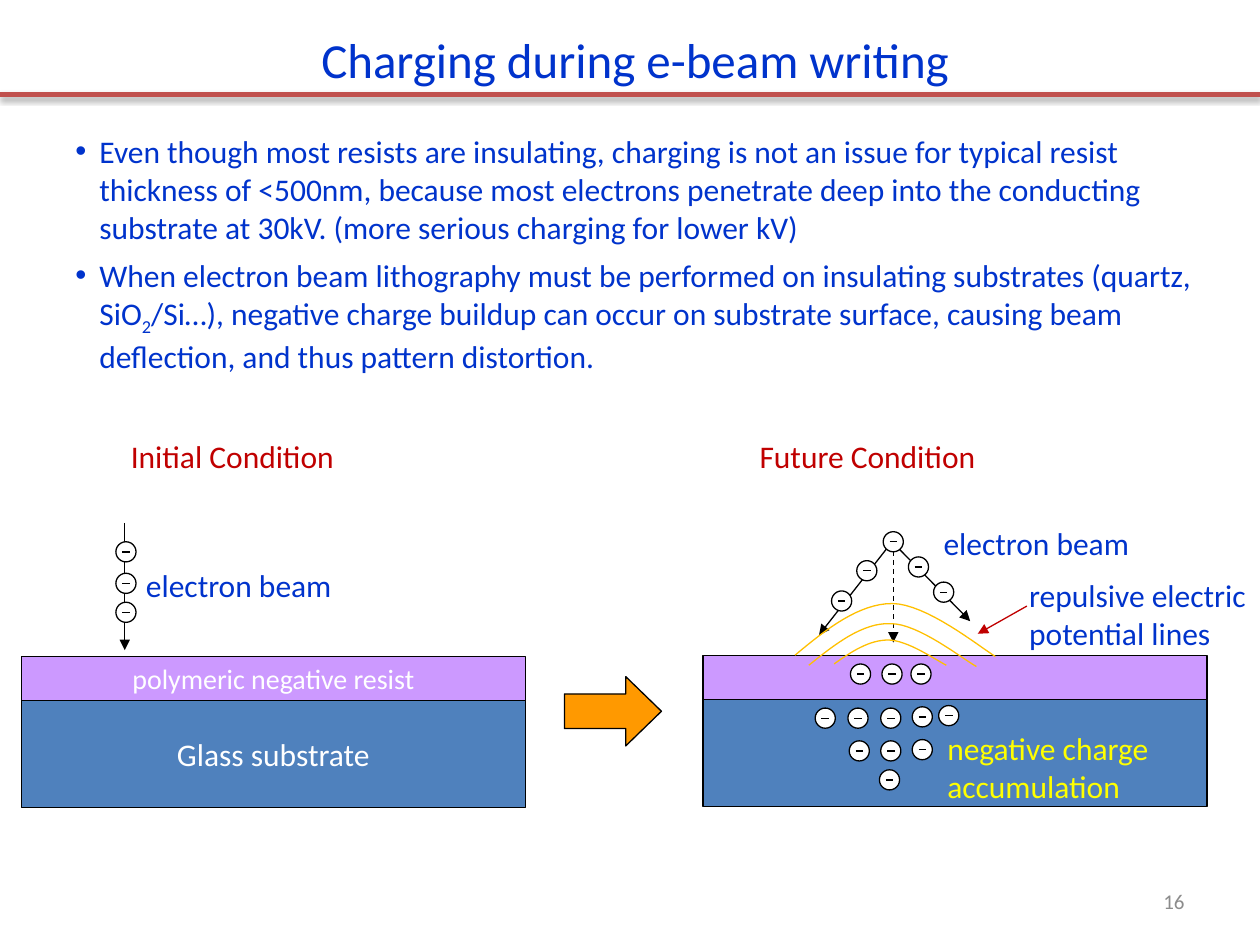
from lxml.etree import SubElement
from pptx import Presentation
from pptx.dml.color import RGBColor
from pptx.enum.dml import MSO_LINE
from pptx.enum.shapes import MSO_CONNECTOR, MSO_SHAPE
from pptx.enum.text import MSO_ANCHOR, PP_ALIGN
from pptx.oxml.ns import qn
from pptx.util import Inches, Pt

COLORS = {
    "blue": "0033CC", "red": "C00000", "rule": "C0504D", "black": "000000",
    "white": "FFFFFF", "glass": "4F81BD", "resist": "CC99FF", "yellow": "FFFF00",
    "gold": "FFC000", "orange": "FF9900", "gray": "8C8C8C",
}
BULLETS = [
    ["Even though most resists are insulating, charging is not an issue for typical resist "
     "thickness of <500nm, because most electrons penetrate deep into the conducting "
     "substrate at 30kV. (more serious charging for lower kV)"],
    ["When electron beam lithography must be performed on insulating substrates (quartz, SiO",
     "2",
     "/Si…), negative charge buildup can occur on substrate surface, causing beam deflection, "
     "and thus pattern distortion."],
]
LABELS = [
    ("electron beam", (1.06, 4.44, 1.69, 0.4), "blue"),
    ("electron beam", (7.39, 4.11, 1.7, 0.4), "blue"),
    ("negative charge\naccumulation", (7.42, 5.74, 1.9, 0.71), "yellow"),
    ("Initial Condition", (0.94, 3.42, 2.2, 0.48), "red"),
    ("Future Condition", (5.93, 3.42, 2.33, 0.48), "red"),
    ("repulsive electric potential lines", (8.07, 4.52, 1.93, 0.71), "blue"),
]
BEAM_ELECTRONS = [
    (1, 4.86), (1, 4.63), (1, 4.38),
    (6.68, 4.77), (6.88, 4.53), (7.09, 4.3), (7.29, 4.5), (7.49, 4.7),
]
TRAPPED_ELECTRONS = [
    (6.83, 5.35), (7.08, 5.35), (7.31, 5.35),
    (6.55, 5.7), (6.81, 5.7), (7.07, 5.7), (7.32, 5.69), (7.53, 5.68),
    (6.82, 5.96), (7.07, 5.96), (7.32, 5.95), (7.06, 6.19),
]
POTENTIAL_LINES = [
    [(6.42, 5.28), (6.63, 5.11), (6.85, 4.94), (7.07, 4.95), (7.29, 4.95), (7.64, 5.23), (7.75, 5.29)],
    [(6.31, 5.2), (6.56, 4.99), (6.82, 4.79), (7.08, 4.79), (7.35, 4.79), (7.77, 5.13), (7.9, 5.21)],
    [(6.62, 5.27), (6.76, 5.17), (6.9, 5.08), (7.05, 5.08), (7.2, 5.08), (7.43, 5.24), (7.51, 5.28)],
]


def rgb(name):
    """Return the named colour."""
    return RGBColor.from_string(COLORS[name])


def style_text(text_frame, size, color, align=PP_ALIGN.LEFT):
    """Format every run of a text frame alike."""
    for paragraph in text_frame.paragraphs:
        paragraph.alignment = align
        for run in paragraph.runs:
            run.font.name = "Calibri"
            run.font.size = Pt(size)
            run.font.color.rgb = rgb(color)


def place(shape, box):
    """Move and size a shape to a box in inches."""
    shape.left, shape.top, shape.width, shape.height = map(Inches, box)


def add_title(slide, text):
    """Fill the title placeholder."""
    title = slide.shapes.title
    place(title, (2.33, 0.18, 5.42, 0.57))
    title.text_frame.text = text
    title.text_frame.vertical_anchor = MSO_ANCHOR.MIDDLE
    style_text(title.text_frame, 28, "blue", PP_ALIGN.CENTER)


def add_label(slide, text, box, color, size=18, align=PP_ALIGN.LEFT):
    """Add a wrapped text box."""
    label = slide.shapes.add_textbox(*map(Inches, box))
    label.text_frame.word_wrap = True
    label.text_frame.text = text
    style_text(label.text_frame, size, color, align)
    return label


def add_bullets(slide, bullets, box):
    """Add bulleted paragraphs whose second runs are subscripts."""
    text_frame = add_label(slide, "\n".join("" for _ in bullets), box, "blue").text_frame
    for paragraph, parts in zip(text_frame.paragraphs, bullets):
        paragraph.space_after = Pt(6)
        properties = paragraph._p.get_or_add_pPr()
        properties.set("marL", str(Inches(0.19)))
        properties.set("indent", str(-Inches(0.19)))
        SubElement(properties, qn("a:buFont"), typeface="Arial")
        SubElement(properties, qn("a:buChar"), char="•")
        for index, part in enumerate(parts):
            run = paragraph.add_run()
            run.text = part
            if index == 1:
                run._r.get_or_add_rPr().set("baseline", "-25000")
    style_text(text_frame, 18, "blue")


def add_filled(shapes, kind, box, fill):
    """Add a filled shape with a thin black outline."""
    shape = shapes.add_shape(kind, *map(Inches, box))
    shape.shadow.inherit = False
    shape.fill.solid()
    shape.fill.fore_color.rgb = rgb(fill)
    shape.line.color.rgb = rgb("black")
    shape.line.width = Pt(0.75)
    return shape


def add_line(shapes, start, end, color="black", width=0.75, arrow=False, dash=None):
    """Add a straight line and return its empty effect list."""
    line = shapes.add_connector(MSO_CONNECTOR.STRAIGHT, *map(Inches, start + end))
    line.line.color.rgb = rgb(color)
    line.line.width = Pt(width)
    if dash:
        line.line.dash_style = dash
    if arrow:
        SubElement(line.line._get_or_add_ln(), qn("a:tailEnd"), type="triangle")
    return SubElement(line._element.spPr, qn("a:effectLst"))


def add_title_rule(slide):
    """Add the thick line below the title with its soft shadow."""
    effects = add_line(slide.shapes, (0, 0.75), (10, 0.75), "rule", 3)
    shadow = SubElement(effects, qn("a:outerShdw"), blurRad=str(Pt(3.1)), dist=str(Pt(1.6)),
                        dir="5400000", rotWithShape="0")
    color = SubElement(shadow, qn("a:srgbClr"), val=COLORS["black"])
    SubElement(color, qn("a:alpha"), val="38000")


def add_electron(slide, x, y):
    """Add a circled minus sign centred on a point."""
    shapes = slide.shapes.add_group_shape().shapes
    add_filled(shapes, MSO_SHAPE.OVAL, (x - 0.08, y - 0.08, 0.16, 0.16), "white")
    add_line(shapes, (x - 0.03, y), (x + 0.03, y))


def add_sample(slide, left, top, substrate="", resist=""):
    """Add a resist layer on top of a substrate."""
    layers = [(substrate, top + 0.35, 0.85, "glass", 18), (resist, top, 0.35, "resist", 16)]
    for text, layer_top, height, fill, size in layers:
        layer = add_filled(slide.shapes, MSO_SHAPE.RECTANGLE, (left, layer_top, 4, height), fill)
        if text:
            layer.text_frame.text = text
            layer.text_frame.word_wrap = False
            layer.text_frame.vertical_anchor = MSO_ANCHOR.MIDDLE
            style_text(layer.text_frame, size, "white", PP_ALIGN.CENTER)


def bezier(controls, t):
    """Return the point at t on a cubic Bezier curve."""
    weights = ((1 - t) ** 3, 3 * t * (1 - t) ** 2, 3 * t ** 2 * (1 - t), t ** 3)
    return tuple(Inches(sum(w * point[axis] for w, point in zip(weights, controls))) for axis in (0, 1))


def add_curve(slide, controls, steps=16):
    """Add an open curve through joined cubic segments."""
    points = [bezier(controls[first:first + 4], step / steps)
              for first in range(0, len(controls) - 1, 3) for step in range(steps + 1)]
    builder = slide.shapes.build_freeform(*points[0])
    builder.add_line_segments(points[1:], close=False)
    curve = builder.convert_to_shape()
    curve.shadow.inherit = False
    curve.fill.background()
    curve.line.color.rgb = rgb("gold")
    curve.line.width = Pt(0.75)


def main():
    """Build and save the slide."""
    presentation = Presentation()
    presentation.slide_width, presentation.slide_height = Inches(10), Inches(7.5)
    slide = presentation.slides.add_slide(presentation.slide_layouts[5])
    add_title_rule(slide)
    add_title(slide, "Charging during e-beam writing")
    add_bullets(slide, BULLETS, (0.5, 1, 9.08, 2))
    add_sample(slide, 0.17, 5.21, "Glass substrate", "polymeric negative resist")
    add_sample(slide, 5.58, 5.2)
    add_line(slide.shapes, (0.99, 4.15), (0.99, 5.16), arrow=True)
    add_line(slide.shapes, (7.09, 4.3), (7.09, 5.1), arrow=True, dash=MSO_LINE.DASH)
    for end in ((6.5, 5.04), (7.7, 4.93)):
        add_line(slide.shapes, (7.08, 4.3), end, arrow=True)
    for controls in POTENTIAL_LINES:
        add_curve(slide, controls)
    for x, y in TRAPPED_ELECTRONS + BEAM_ELECTRONS:
        add_electron(slide, x, y)
    arrow = add_filled(slide.shapes, MSO_SHAPE.RIGHT_ARROW, (4.48, 5.37, 0.77, 0.55), "orange")
    arrow.adjustments[1] = 0.515
    for text, box, color in LABELS:
        add_label(slide, text, box, color)
    add_line(slide.shapes, (8.15, 4.81), (7.76, 5.03), "red", arrow=True)
    number = add_label(slide, "16", (7.17, 6.95, 2.33, 0.4), "gray", 12, PP_ALIGN.RIGHT)
    number.text_frame.vertical_anchor = MSO_ANCHOR.MIDDLE
    presentation.save("out.pptx")


if __name__ == "__main__":
    main()
